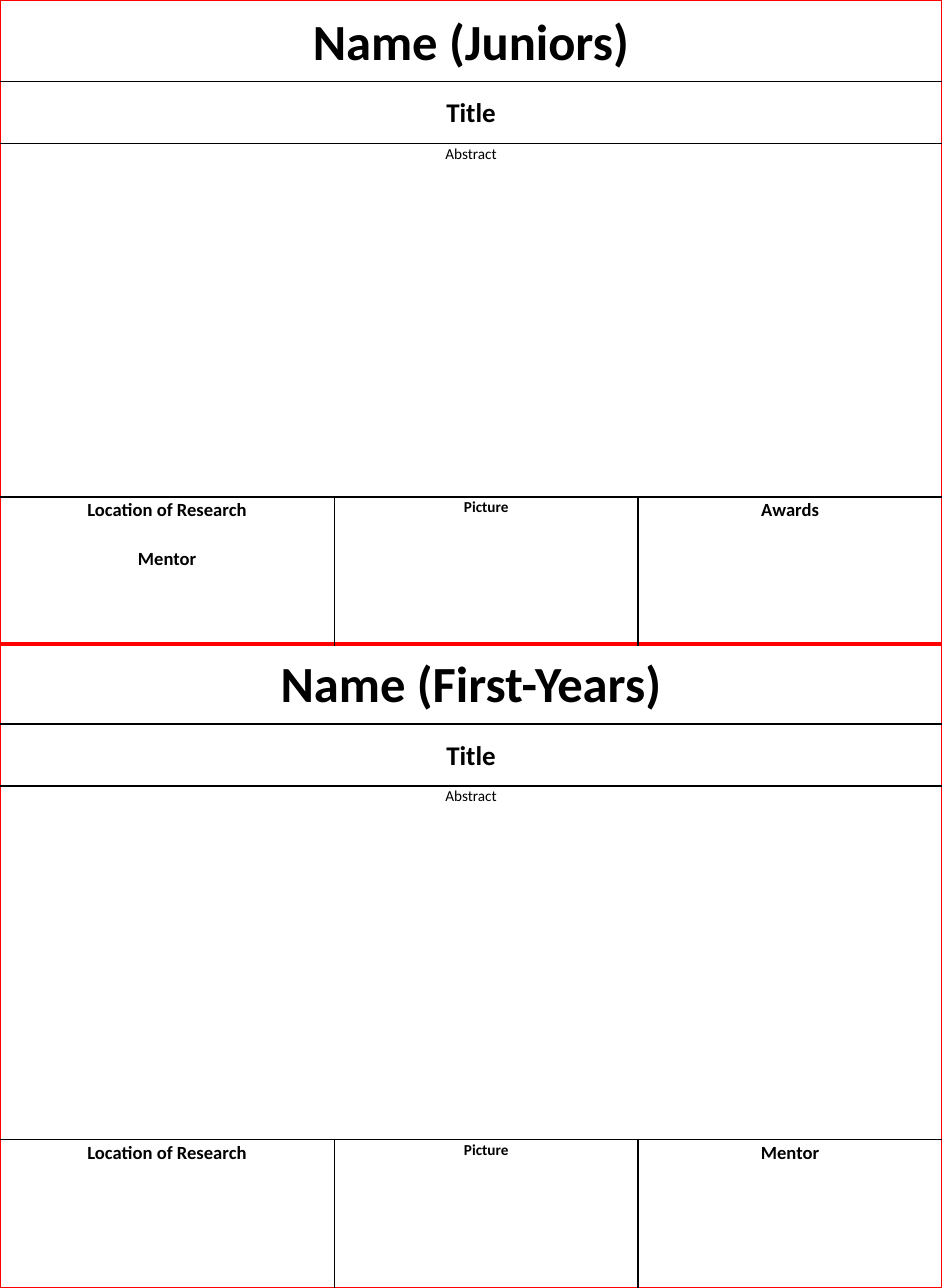
from lxml import etree
from pptx import Presentation
from pptx import util as u
from pptx.dml.color import RGBColor
from pptx.enum import text
from pptx.oxml import ns

WIDTH, HEIGHT = 7.75, 10.6
COLUMNS = (2.75, 2.5, 2.5)
ROWS = (0.67, 0.51, 2.91, 1.22)
BLACK, RED = "000000", "FF0000"
LINE_WIDTHS = {BLACK: 1, RED: 1.5}


def color(value):
    """Turn a hex string into a colour."""
    return RGBColor.from_string(value)


def set_borders(cell, left, right, top, bottom):
    """Draw the four borders of a cell in the given colours."""
    properties = cell._tc.get_or_add_tcPr()
    for index, (side, value) in enumerate(zip("LRTB", (left, right, top, bottom))):
        line = etree.Element(ns.qn(f"a:ln{side}"), w=str(u.Pt(LINE_WIDTHS[value])))
        fill = etree.SubElement(line, ns.qn("a:solidFill"))
        etree.SubElement(fill, ns.qn("a:srgbClr"), val=value)
        properties.insert(index, line)


def fill_cell(cell, lines, size, bold=True, middle=False):
    """Write centred lines in a cell, one blank line's height apart."""
    cell.fill.background()
    cell.margin_left = cell.margin_right = u.Inches(0.06)
    cell.margin_top = cell.margin_bottom = 0
    anchors = text.MSO_ANCHOR
    cell.vertical_anchor = anchors.MIDDLE if middle else anchors.TOP
    frame = cell.text_frame
    for index, line in enumerate(lines):
        paragraph = frame.add_paragraph() if index else frame.paragraphs[0]
        paragraph.alignment = text.PP_ALIGN.CENTER
        paragraph.line_spacing = 1.07
        if index:
            paragraph.space_before = u.Pt(14.5)
        run = paragraph.add_run()
        run.text = line
        run.font.name = "Calibri"
        run.font.size = u.Pt(size)
        run.font.bold = bold
        run.font.color.rgb = color(BLACK)


def add_student_card(slide, left, top, width, height, name, details, closing):
    """Add one student's table in the given box."""
    shape = slide.shapes.add_table(
        len(ROWS), len(COLUMNS),
        u.Inches(left), u.Inches(top), u.Inches(width), u.Inches(height))
    table = shape.table
    table.first_row = table.horz_banding = False
    for column, share in zip(table.columns, COLUMNS):
        column.width = u.Inches(width * share / sum(COLUMNS))
    for row, share in zip(table.rows, ROWS):
        row.height = u.Inches(height * share / sum(ROWS))

    headings = ((name, 30, True, True), ("Title", 16, True, True),
                ("Abstract", 9, False, False))
    last = len(COLUMNS) - 1
    for index, (label, size, bold, middle) in enumerate(headings):
        cell = table.cell(index, 0)
        cell.merge(table.cell(index, last))
        fill_cell(cell, [label], size, bold, middle)
        set_borders(cell, RED, RED, BLACK if index else RED, BLACK)

    footers = ((details, 11), (["Picture"], 9), ([closing], 11))
    for index, (lines, size) in enumerate(footers):
        cell = table.cell(len(headings), index)
        fill_cell(cell, lines, size)
        set_borders(cell, BLACK if index else RED,
                    RED if index == last else BLACK, BLACK, RED)


def main():
    """Build the slide with both student cards."""
    presentation = Presentation()
    presentation.slide_width = u.Inches(WIDTH)
    presentation.slide_height = u.Inches(HEIGHT)
    slide = presentation.slides.add_slide(presentation.slide_layouts[6])
    card_height = sum(ROWS)
    add_student_card(slide, 0, HEIGHT - card_height, WIDTH, card_height,
                     "Name (First-Years)", ["Location of Research"], "Mentor")
    add_student_card(slide, 0, 0, WIDTH, card_height,
                     "Name (Juniors)", ["Location of Research", "Mentor"], "Awards")
    presentation.save("out.pptx")


if __name__ == "__main__":
    main()
